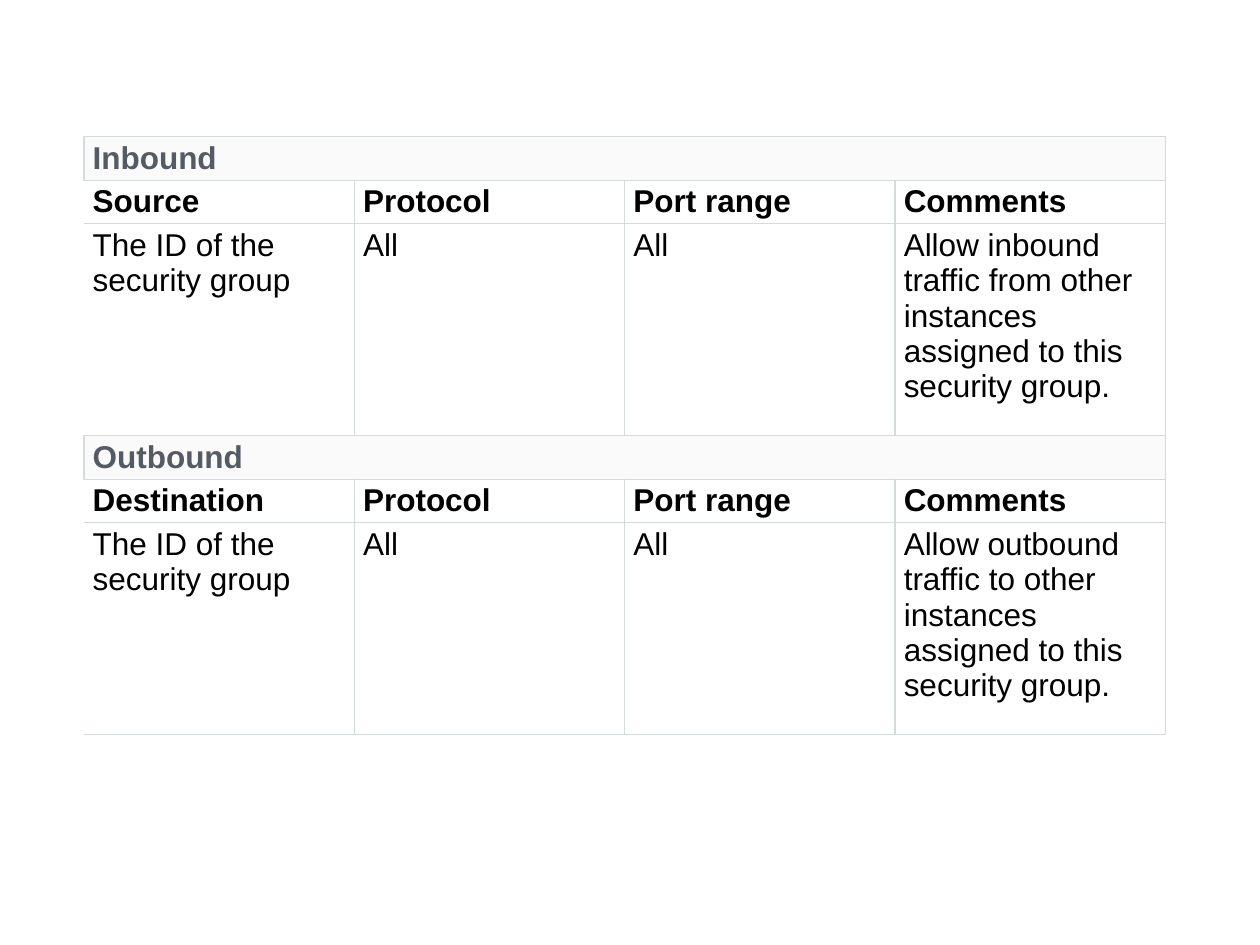
from pptx import Presentation
from pptx.dml.color import RGBColor as RGB
from pptx.oxml import parse_xml
from pptx.oxml.ns import nsdecls
from pptx.util import Pt

BLACK = RGB(0x00, 0x00, 0x00)
WHITE = RGB(0xFF, 0xFF, 0xFF)
SLATE = RGB(0x54, 0x5B, 0x64)
PALE = RGB(0xFA, 0xFA, 0xFA)
RULE = RGB(0xD5, 0xDB, 0xDB)

# Content: band title, column heads, rule
GROUPS = [
    ("Inbound",
     ["Source", "Protocol", "Port range", "Comments"],
     ["The ID of the security group", "All", "All",
      "Allow inbound traffic from other instances assigned to this security group."]),
    ("Outbound",
     ["Destination", "Protocol", "Port range", "Comments"],
     ["The ID of the security group", "All", "All",
      "Allow outbound traffic to other instances assigned to this security group."]),
]
LEFT, TOP = 48, 78
COL_W, COLS = 154.5, 4
# Kind of row: height, fill, text colour, bold
KINDS = [
    (19.4, PALE, SLATE, True),
    (19.4, WHITE, BLACK, True),
    (121, WHITE, BLACK, False),
]


def edge(cell, side, width):
    """Append one cell border; a width of 0 hides it."""
    paint = f'<a:solidFill><a:srgbClr val="{RULE}"/></a:solidFill>' if width else "<a:noFill/>"
    cell._tc.get_or_add_tcPr().append(parse_xml(
        f'<a:ln{side} {nsdecls("a")} w="{Pt(width)}">{paint}</a:ln{side}>'))


def style(cell, kind, col):
    _, fill, color, bold = KINDS[kind]
    band = kind == 0
    first = 1 if band else 0
    for side, width in (("L", 0.75 if col else first), ("R", 0.75),
                        ("T", 1 if band else 0.75), ("B", 0.75)):
        edge(cell, side, width)
    cell.fill.solid()
    cell.fill.fore_color.rgb = fill
    cell.margin_left = cell.margin_right = Pt(5)
    cell.margin_top = cell.margin_bottom = Pt(2.4)
    font = cell.text_frame.paragraphs[0].font
    font.name, font.size, font.bold = "Arial", Pt(18), bold
    font.color.rgb = color


# Slide
prs = Presentation()
prs.slide_width, prs.slide_height = Pt(720), Pt(540)
slide = prs.slides.add_slide(prs.slide_layouts[6])

# Table
rows = [(kind, line)
        for title, heads, rule in GROUPS
        for kind, line in enumerate([[title] + [""] * (COLS - 1), heads, rule])]
high = sum(KINDS[kind][0] for kind, _ in rows)
table = slide.shapes.add_table(len(rows), COLS, Pt(LEFT), Pt(TOP),
                               Pt(COL_W * COLS), Pt(high)).table
table.first_row = table.horz_banding = False
for column in table.columns:
    column.width = Pt(COL_W)

for r, (kind, line) in enumerate(rows):
    table.rows[r].height = Pt(KINDS[kind][0])
    for c, text in enumerate(line):
        cell = table.cell(r, c)
        cell.text = text
        style(cell, kind, c)
    if kind == 0:
        table.cell(r, 0).merge(table.cell(r, COLS - 1))

prs.save("out.pptx")
